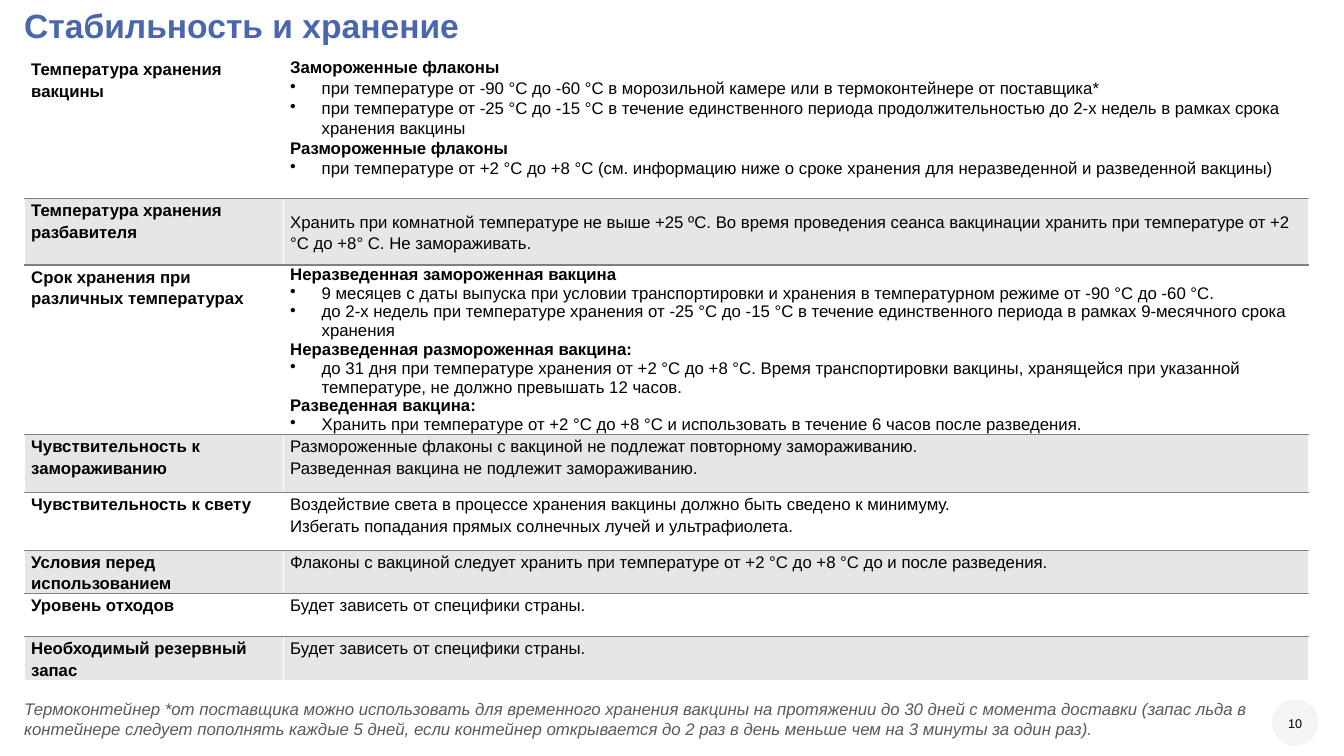
import pptx
import pptx.dml.color
import pptx.enum.shapes
import pptx.enum.text
import pptx.oxml
import pptx.oxml.ns
import pptx.util

Pt = pptx.util.Pt
RGB = pptx.dml.color.RGBColor.from_string
ANCHOR = pptx.enum.text.MSO_ANCHOR
ALIGN = pptx.enum.text.PP_ALIGN
COLORS = {
    "title": "4A66AC", "text": "000000", "note": "595959", "band": "E6E6E6",
    "rule": "808080", "white": "FFFFFF", "badge": "F4F4F6",
}

# Each row: height, label, line spacing, lines of the right-hand cell.
# In the multi-section rows a leading "•" marks a list item, other lines are headings.
ROWS = [
    (100.8, "Температура хранения вакцины", 1.07, [
        "Замороженные флаконы",
        "•при температуре от -90 °C до -60 °C в морозильной камере или в термоконтейнере от поставщика*",
        "•при температуре от -25 °C до -15 °C в течение единственного периода продолжительностью до 2-х недель в рамках срока хранения вакцины",
        "Размороженные флаконы",
        "•при температуре от +2 °C до +8 °C (см. информацию ниже о сроке хранения для неразведенной и разведенной вакцины)",
    ]),
    (47.5, "Температура хранения разбавителя", 1.15, [
        "Хранить при комнатной температуре не выше +25 ºC. Во время проведения сеанса вакцинации хранить при температуре от +2 °C до +8° C. Не замораживать.",
    ]),
    (112.3, "Срок хранения при различных температурах", 1.0, [
        "Неразведенная замороженная вакцина",
        "•9 месяцев с даты выпуска при условии транспортировки и хранения в температурном режиме от -90 °C до -60 °C.",
        "•до 2-х недель при температуре хранения от -25 °C до -15 °C в течение единственного периода в рамках 9-месячного срока хранения",
        "Неразведенная размороженная вакцина:",
        "•до 31 дня при температуре хранения от +2 °C до +8 °C. Время транспортировки вакцины, хранящейся при указанной температуре, не должно превышать 12 часов.",
        "Разведенная вакцина:",
        "•Хранить при температуре от +2 °C до +8 °C и использовать в течение 6 часов после разведения.",
    ]),
    (41.8, "Чувствительность к замораживанию", 1.15, [
        "Размороженные флаконы с вакциной не подлежат повторному замораживанию.",
        "Разведенная вакцина не подлежит замораживанию.",
    ]),
    (41, "Чувствительность к свету", 1.15, [
        "Воздействие света в процессе хранения вакцины должно быть сведено к минимуму.",
        "Избегать попадания прямых солнечных лучей и ультрафиолета.",
    ]),
    (25.2, "Условия перед использованием", 1.15, [
        "Флаконы с вакциной следует хранить при температуре от +2 °C до +8 °C до и после разведения.",
    ]),
    (31, "Уровень отходов", 1.15, ["Будет зависеть от специфики страны."]),
    (23.8, "Необходимый резервный запас", 1.15, ["Будет зависеть от специфики страны."]),
]


def format_runs(p, size, color, bold=False, italic=False):
    for r in p.runs:
        r.font.name = "Arial"
        r.font.size = Pt(size)
        r.font.bold = bold
        r.font.italic = italic
        r.font.color.rgb = RGB(COLORS[color])


def prepare_frame(tf, anchor):
    """Remove the margins, wrap the text and keep the box size."""
    tf.margin_left = tf.margin_top = tf.margin_right = tf.margin_bottom = 0
    tf.word_wrap = True
    tf.auto_size = pptx.enum.text.MSO_AUTO_SIZE.NONE
    tf.vertical_anchor = anchor


prs = pptx.Presentation()
prs.slide_width, prs.slide_height = Pt(960), Pt(540)
s = prs.slides.add_slide(prs.slide_layouts.get_by_name("Title Only"))

# Slide number badge
badge = s.shapes.add_shape(pptx.enum.shapes.MSO_SHAPE.OVAL, Pt(908.6), Pt(499.7), Pt(33.1), Pt(33.1))
badge.shadow.inherit = False
badge.fill.solid()
badge.fill.fore_color.rgb = RGB(COLORS["badge"])
badge.line.fill.background()
number = s.shapes.add_textbox(Pt(912.2), Pt(511.2), Pt(25.9), Pt(10.8))
prepare_frame(number.text_frame, ANCHOR.BOTTOM)
p = number.text_frame.paragraphs[0]
p.text = "10"
p.alignment = ALIGN.CENTER
format_runs(p, 9, "text")

# Title
title = s.shapes.title
title.left, title.top, title.width, title.height = Pt(17.3), Pt(3.6), Pt(872.6), Pt(28.8)
prepare_frame(title.text_frame, ANCHOR.MIDDLE)
p = title.text_frame.paragraphs[0]
p.text = "Стабильность и хранение"
p.alignment = ALIGN.LEFT
format_runs(p, 24, "title", bold=True)

# Storage table
frame = s.shapes.add_table(len(ROWS), 2, Pt(17.3), Pt(41), Pt(917.2), Pt(sum(row[0] for row in ROWS)))
table = frame.table
table.first_row = table.horz_banding = False
table.columns[0].width, table.columns[1].width = Pt(185), Pt(732.2)

for i, (height, label, spacing, lines) in enumerate(ROWS):
    table.rows[i].height = Pt(height)
    top = "white" if i == 0 else "rule"
    bottom = "white" if i == len(ROWS) - 1 else "rule"
    has_list = any(line.startswith("•") for line in lines)
    for j, texts in enumerate(([label], lines)):
        cell = table.cell(i, j)
        cell.margin_left = cell.margin_right = Pt(5)
        cell.margin_top = cell.margin_bottom = 0
        cell.vertical_anchor = ANCHOR.MIDDLE if (i, j) == (1, 1) else ANCHOR.TOP
        tcPr = cell._tc.get_or_add_tcPr()
        for side, color in (("L", "white"), ("R", "white"), ("T", top), ("B", bottom)):
            tcPr.append(pptx.oxml.parse_xml(
                f'<a:ln{side} {pptx.oxml.ns.nsdecls("a")} w="{Pt(1)}"><a:solidFill>'
                f'<a:srgbClr val="{COLORS[color]}"/></a:solidFill></a:ln{side}>'))
        if i % 2:
            cell.fill.solid()
            cell.fill.fore_color.rgb = RGB(COLORS["band"])
        else:
            cell.fill.background()

        tf = cell.text_frame
        tf.text = "\n".join(text.lstrip("•") for text in texts)
        for p, text in zip(tf.paragraphs, texts):
            is_item = text.startswith("•")
            if is_item:
                pPr = p._p.get_or_add_pPr()
                pPr.set("marL", str(Pt(22.5)))
                pPr.set("indent", str(-Pt(22.5)))
                pPr.append(pptx.oxml.parse_xml(f'<a:buChar {pptx.oxml.ns.nsdecls("a")} char="•"/>'))
            p.line_spacing = 1.15 if j == 0 else spacing
            format_runs(p, 12, "text", bold=j == 0 or (has_list and not is_item))

# Footnote
note = s.shapes.add_textbox(Pt(17.3), Pt(499), Pt(889.2), Pt(38.2))
prepare_frame(note.text_frame, ANCHOR.TOP)
p = note.text_frame.paragraphs[0]
p.text = (
    "Термоконтейнер *от поставщика можно использовать для временного хранения вакцины на протяжении "
    "до 30 дней с момента доставки (запас льда в контейнере следует пополнять каждые 5 дней, "
    "если контейнер открывается до 2 раз в день меньше чем на 3 минуты за один раз)."
)
p.space_after = Pt(3)
format_runs(p, 12, "note", italic=True)

prs.save("out.pptx")
